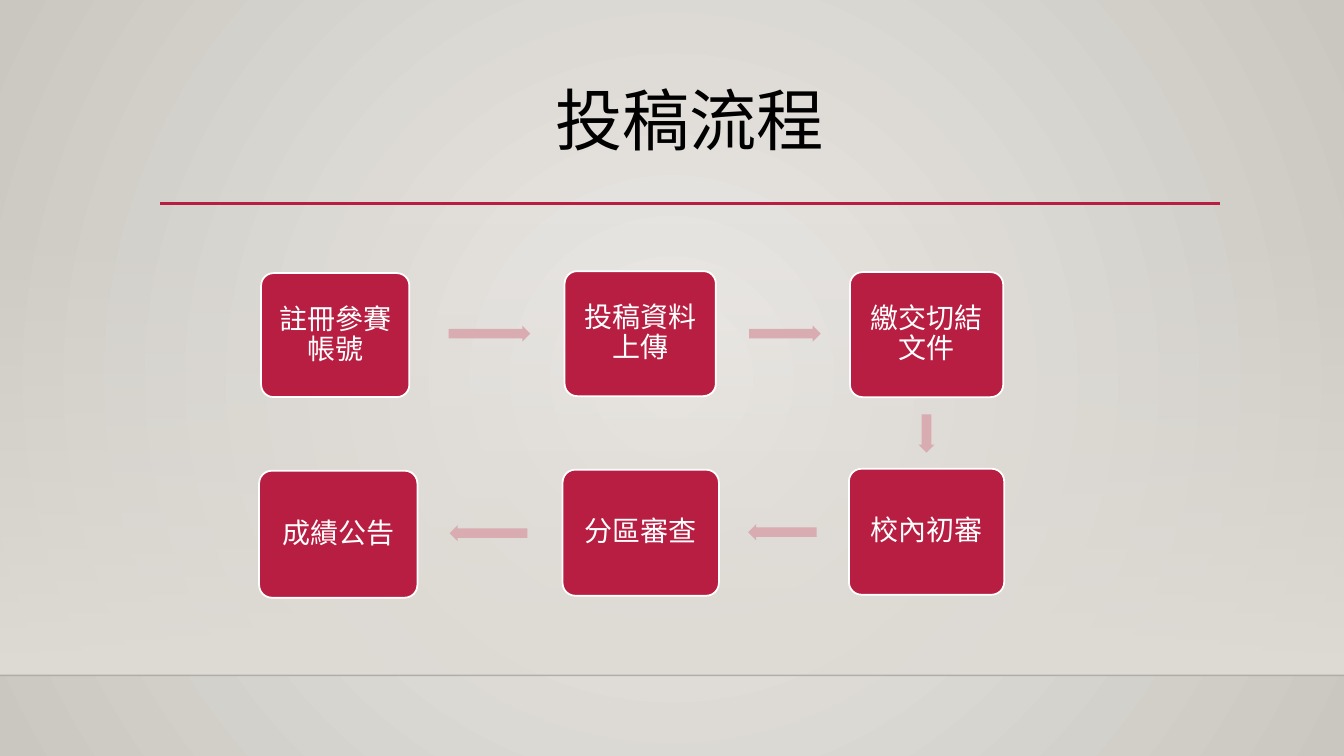
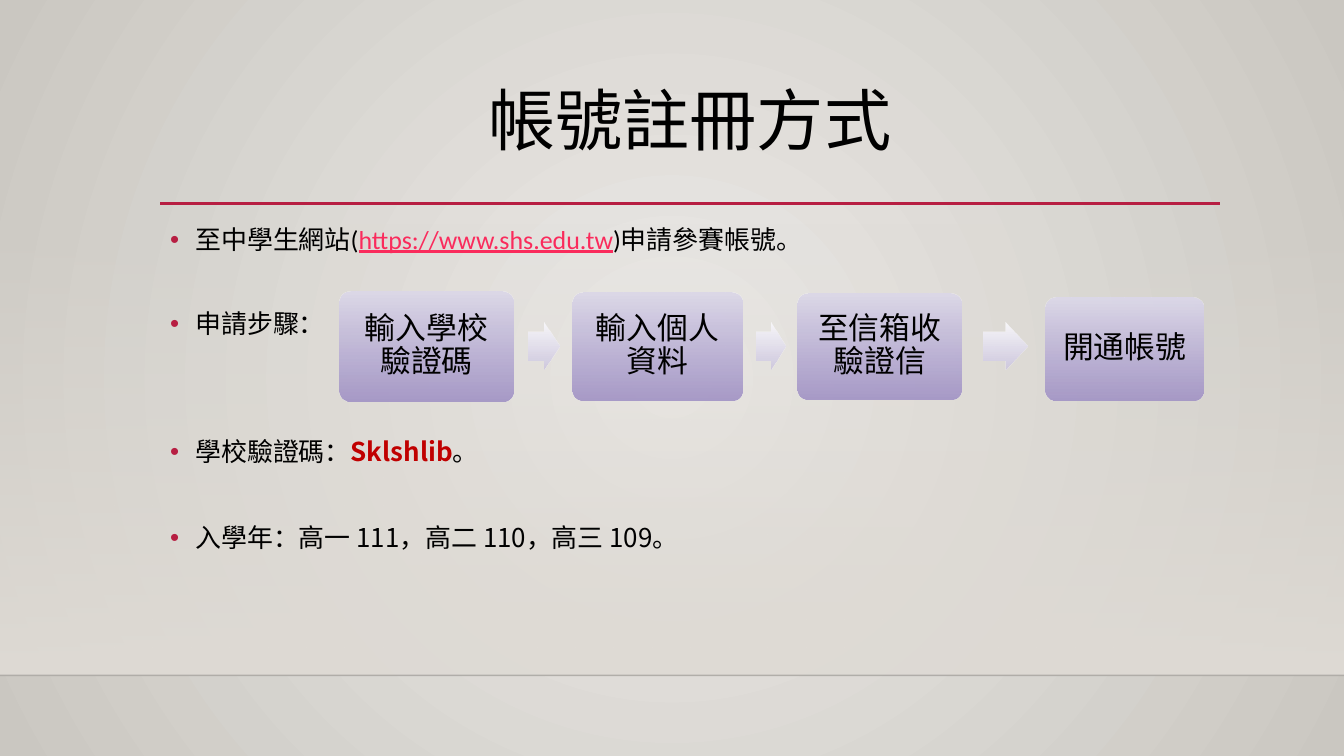
import lxml.etree
import pptx
import pptx.dml.color
import pptx.enum.dml
import pptx.enum.shapes
import pptx.enum.text
import pptx.oxml.ns
import pptx.util

Inches = pptx.util.Inches
Pt = pptx.util.Pt
RGBColor = pptx.dml.color.RGBColor
SHAPE = pptx.enum.shapes.MSO_SHAPE
ALIGN = pptx.enum.text.PP_ALIGN
ANCHOR = pptx.enum.text.MSO_ANCHOR
qn = pptx.oxml.ns.qn

BLACK = RGBColor(0x00, 0x00, 0x00)
WHITE = RGBColor(0xFF, 0xFF, 0xFF)
CRIMSON = RGBColor(0xB7, 0x1E, 0x42)
PINK = RGBColor(0xD8, 0xAC, 0xB0)
LINK = RGBColor(0xFA, 0x2B, 0x5C)
RED = RGBColor(0xC0, 0x00, 0x00)
BG_CENTRE = RGBColor(0xEC, 0xEA, 0xE7)
BG_EDGE = RGBColor(0xCA, 0xC7, 0xC1)
WALL = RGBColor(0xDF, 0xDB, 0xD5)
LILAC_BOX = (RGBColor(0xDC, 0xD8, 0xE8), RGBColor(0xA3, 0x95, 0xC6))
LILAC_ARROW = (RGBColor(0xF8, 0xF7, 0xFA), RGBColor(0xCE, 0xC8, 0xDF))

SC = "Noto Sans CJK SC"
TC = "Noto Sans CJK TC"
LATIN = "Calibri"


def add_xml(parent, tag, **attrs):
    el = lxml.etree.SubElement(parent, qn(tag))
    for name, value in attrs.items():
        el.set(name, str(value))
    return el


def write(p, text, size=18.5, color=BLACK, font=TC, ea=TC, bold=False,
          underline=False):
    r = p.add_run()
    r.text = text
    r.font.size = Pt(size)
    r.font.color.rgb = color
    r.font.name = font
    r.font.bold = bold
    r.font.underline = underline
    add_xml(r.font._element, "a:ea", typeface=ea)


def set_gradient(owner, fill, colors, alphas=(100, 100), radial=False):
    fill.gradient()
    for stop, color in zip(fill.gradient_stops, colors):
        stop.color.rgb = color
    grad = next(owner.element.iter(qn("a:gradFill")))
    for clr, alpha in zip(grad.iter(qn("a:srgbClr")), alphas):
        if alpha < 100:
            add_xml(clr, "a:alpha", val=alpha * 1000)
    if radial:
        grad.remove(grad.find(qn("a:lin")))
        circle = add_xml(grad, "a:path", path="circle")
        add_xml(circle, "a:fillToRect", l=50000, t=50000, r=50000, b=50000)
    else:
        fill.gradient_angle = 270


def add_shape(slide, kind, box, fill, alphas=(100, 92), line=None, adj=()):
    sp = slide.shapes.add_shape(kind, *map(Inches, box))
    sp.shadow.inherit = False
    for i, value in enumerate(adj):
        sp.adjustments[i] = value
    if isinstance(fill, tuple) and not isinstance(fill, RGBColor):
        set_gradient(sp, sp.fill, fill, alphas)
    else:
        sp.fill.solid()
        sp.fill.fore_color.rgb = fill
    if line is None:
        sp.line.fill.background()
    else:
        sp.line.color.rgb = line
        sp.line.width = Pt(1.25)
    return sp


def add_step(slide, text, box, fill, line=None, **fmt):
    sp = add_shape(slide, SHAPE.ROUNDED_RECTANGLE, box, fill, line=line,
                   adj=(0.1,))
    tf = sp.text_frame
    tf.word_wrap = True
    tf.vertical_anchor = ANCHOR.MIDDLE
    tf.margin_left = tf.margin_right = Inches(0.12)
    tf.margin_top = tf.margin_bottom = Inches(0.12)
    p = tf.paragraphs[0]
    p.alignment = ALIGN.CENTER
    p.line_spacing = 0.9
    write(p, text, **fmt)


def add_arrow(slide, box, fill, kind=SHAPE.RIGHT_ARROW):
    add_shape(slide, kind, box, fill, adj=(0.6, 0.5))


def add_rule(slide, left, right, y, color, width, alpha=100):
    cx = slide.shapes.add_connector(
        pptx.enum.shapes.MSO_CONNECTOR.STRAIGHT,
        Inches(left), Inches(y), Inches(right), Inches(y))
    cx.line.color.rgb = color
    cx.line.width = Pt(width)
    if alpha < 100:
        clr = next(cx.element.iter(qn("a:srgbClr")))
        add_xml(clr, "a:alpha", val=alpha * 1000)
    add_xml(cx.element.spPr, "a:effectLst")
    return cx


def dress_layout(layout, slide):
    set_gradient(layout, layout.background.fill, (BG_CENTRE, BG_EDGE),
                 radial=True)
    title, *footers = layout.placeholders
    for ph in footers:
        ph.element.getparent().remove(ph.element)
    backdrop = [
        add_shape(slide, SHAPE.RECTANGLE, (0, 2.21, 13.33, 4.49),
                  (WALL, WALL), alphas=(0, 100)),
        add_rule(slide, 0, 13.33, 6.7, BLACK, 1, alpha=20),
        add_rule(slide, 1.59, 12.1, 2.02, CRIMSON, 2.5),
    ]
    for part in backdrop:
        title.element.addprevious(part.element)


def set_title(slide, text, height):
    sp = slide.shapes.title
    sp.left, sp.top = Inches(1.59), Inches(0.88)
    sp.width, sp.height = Inches(10.5), Inches(height)
    tf = sp.text_frame
    tf.auto_size = pptx.enum.text.MSO_AUTO_SIZE.NONE
    tf.word_wrap = True
    tf.vertical_anchor = ANCHOR.TOP
    p = tf.paragraphs[0]
    p.alignment = ALIGN.CENTER
    p.line_spacing = 0.8
    write(p, text, size=48, font=SC, ea=SC)


def add_bullets(slide, box, items):
    tf = slide.shapes.add_textbox(*map(Inches, box)).text_frame
    tf.word_wrap = True
    for i, (before, runs) in enumerate(items):
        p = tf.add_paragraph() if i else tf.paragraphs[0]
        pPr = p._p.get_or_add_pPr()
        pPr.set("marL", str(Inches(0.25)))
        pPr.set("indent", str(Inches(-0.25)))
        add_xml(add_xml(pPr, "a:buClr"), "a:srgbClr", val=CRIMSON)
        add_xml(pPr, "a:buFont", typeface="Arial")
        add_xml(pPr, "a:buChar", char="•")
        p.line_spacing = 0.9
        if before:
            p.space_before = Pt(before)
        for text, fmt in runs:
            write(p, text, **fmt)


def build_submission(slide):
    set_title(slide, "投稿流程", 1.15)
    steps = [
        ("註冊參賽帳號", (2.59, 2.71, 1.47, 1.23)),
        ("投稿資料上傳", (5.6, 2.69, 1.5, 1.24)),
        ("繳交切結文件", (8.43, 2.7, 1.52, 1.24)),
        ("校內初審", (8.42, 4.65, 1.54, 1.25)),
        ("分區審查", (5.58, 4.66, 1.55, 1.25)),
        ("成績公告", (2.57, 4.67, 1.57, 1.26)),
    ]
    for text, box in steps:
        add_step(slide, text, box, CRIMSON, line=WHITE, size=20, color=WHITE,
                 font=SC, ea=SC)
    arrows = [
        (SHAPE.RIGHT_ARROW, (4.45, 3.23, 0.81, 0.16)),
        (SHAPE.RIGHT_ARROW, (7.43, 3.23, 0.71, 0.16)),
        (SHAPE.DOWN_ARROW, (9.11, 4.11, 0.16, 0.38)),
        (SHAPE.LEFT_ARROW, (7.42, 5.2, 0.68, 0.16)),
        (SHAPE.LEFT_ARROW, (4.46, 5.21, 0.77, 0.16)),
    ]
    for kind, box in arrows:
        add_arrow(slide, box, PINK, kind)


def build_registration(slide):
    set_title(slide, "帳號註冊方式", 0.81)
    latin = {"font": LATIN}
    add_bullets(slide, (1.59, 2.2, 10.5, 3.77), [
        (0, [("至中學生網站(", latin),
             ("https://www.shs.edu.tw",
              {"font": LATIN, "color": LINK, "underline": True}),
             (")申請參賽帳號", latin), ("。", {})]),
        (40, [("申請步驟", latin), ("：", {})]),
        (72, [("學校驗證碼：", {}),
              ("Sklshlib", {"color": RED, "bold": True}), ("。", {})]),
        (41, [("入學年：高一 111，高二 110，高三 109。", {})]),
    ])
    steps = [
        ("輸入學校驗證碼", (3.37, 2.89, 1.72, 1.09)),
        ("輸入個人資料", (5.68, 2.9, 1.68, 1.07)),
        ("至信箱收驗證信", (7.91, 2.91, 1.63, 1.05)),
        ("開通帳號", (10.37, 2.95, 1.57, 1.02)),
    ]
    for text, box in steps:
        add_step(slide, text, box, LILAC_BOX, size=22, font=LATIN)
    for left, width in ((5.24, 0.31), (7.5, 0.29), (9.75, 0.44)):
        add_arrow(slide, (left, 3.2, width, 0.47), LILAC_ARROW)


def main():
    prs = pptx.Presentation()
    prs.slide_width, prs.slide_height = Inches(13.33), Inches(7.5)
    layout = prs.slide_layouts[5]
    submission = prs.slides.add_slide(layout)
    dress_layout(layout, submission)
    build_submission(submission)
    build_registration(prs.slides.add_slide(layout))
    prs.save("out.pptx")


if __name__ == "__main__":
    main()
